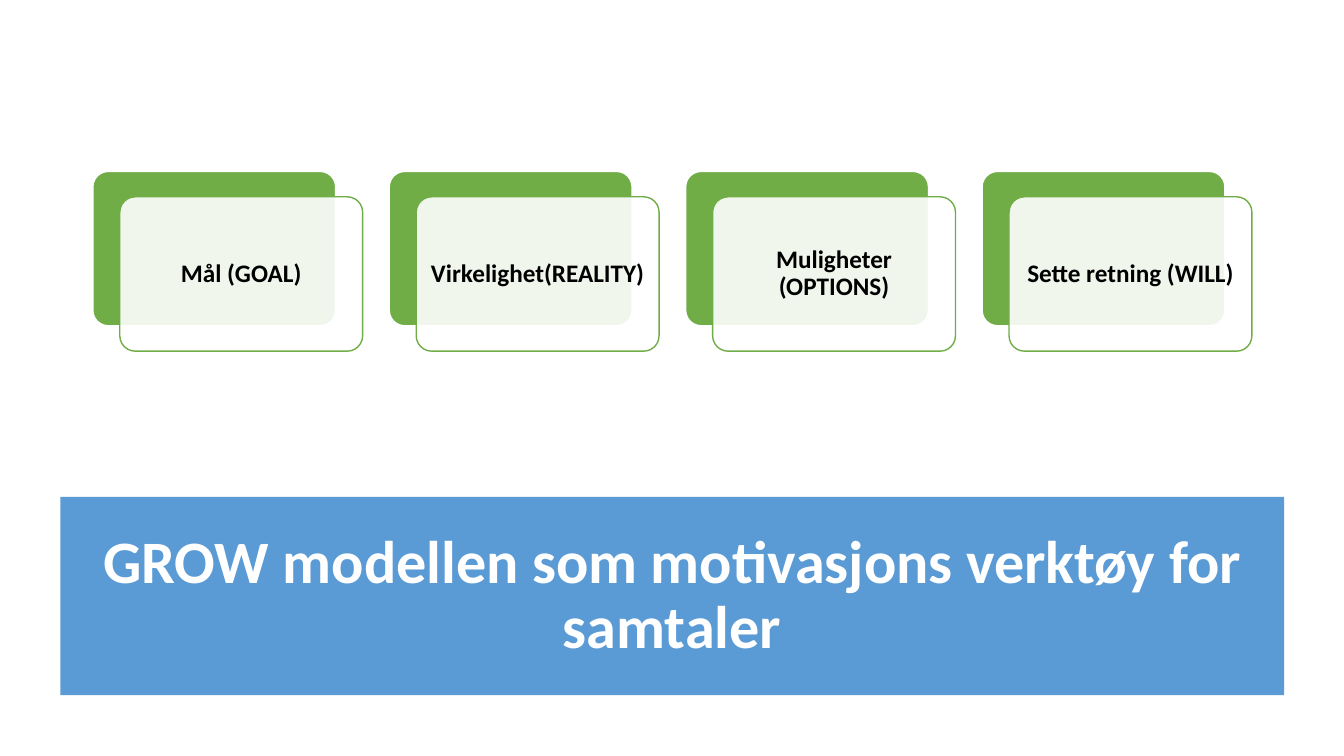
from dataclasses import dataclass

from lxml import etree
from pptx import Presentation
from pptx.dml.color import RGBColor
from pptx.enum import shapes, text
from pptx.oxml import ns
from pptx.util import Cm, Pt


@dataclass(frozen=True)
class Theme:
    font: str = "Calibri"
    banner: RGBColor = RGBColor(0x5B, 0x9B, 0xD5)
    card: RGBColor = RGBColor(0x70, 0xAD, 0x47)
    light: RGBColor = RGBColor(0xFF, 0xFF, 0xFF)
    dark: RGBColor = RGBColor(0, 0, 0)
    title_size: Pt = Pt(43)
    card_size: Pt = Pt(18)
    outline: Pt = Pt(1)


@dataclass(frozen=True)
class Box:
    left: int
    top: int
    width: int
    height: int

    def inset(self, across, down):
        return Box(self.left + across, self.top + down,
                   self.width - 2 * across, self.height - 2 * down)

    def args(self):
        return self.left, self.top, self.width, self.height


THEME = Theme()
TITLE = "GROW modellen som motivasjons verktøy for samtaler"
STEPS = ["Mål (GOAL)", "Virkelighet(REALITY)", "Muligheter (OPTIONS)", "Sette retning (WILL)"]


def add_panel(parent, kind, box, fill, line=None):
    panel = parent.add_shape(kind, *box.args())
    panel.shadow.inherit = False
    panel.fill.solid()
    panel.fill.fore_color.rgb = fill
    if line is None:
        panel.line.fill.background()
    else:
        panel.line.color.rgb = line
        panel.line.width = THEME.outline
    return panel


def set_opacity(shape, percent):
    color = shape.fill._xPr.find(ns.qn("a:solidFill"))[0]
    etree.SubElement(color, ns.qn("a:alpha")).set("val", str(percent * 1000))


def write_centred(shape, words, size, color):
    frame = shape.text_frame
    frame.word_wrap = True
    frame.vertical_anchor = text.MSO_ANCHOR.MIDDLE
    para = frame.paragraphs[0]
    para.text = words
    para.alignment = text.PP_ALIGN.CENTER
    para.line_spacing = 0.9
    para.font.name = THEME.font
    para.font.size = size
    para.font.bold = True
    para.font.color.rgb = color
    return frame


def add_step(group, box, label):
    """Place a solid card and, shifted down and right, a translucent labelled one."""
    shift_x, shift_y = Cm(0.68), Cm(0.64)
    width, height = box.width - shift_x, box.height - shift_y
    back = Box(box.left, box.top, width, height)
    front = Box(box.left + shift_x, box.top + shift_y, width, height)
    rounded = shapes.MSO_SHAPE.ROUNDED_RECTANGLE
    back_card = add_panel(group, rounded, back, THEME.card, THEME.light)
    front_card = add_panel(group, rounded, front, THEME.light, THEME.card)
    for card in (back_card, front_card):
        card.adjustments[0] = 0.1
    set_opacity(front_card, 90)
    frame = write_centred(front_card, label, THEME.card_size, THEME.dark)
    frame.margin_left = frame.margin_right = Cm(0.18)
    frame.margin_top = frame.margin_bottom = Cm(0.18)


def add_steps(slide, box):
    group = slide.shapes.add_group_shape().shapes
    gap = Cm(0.67)
    width = (box.width - gap * (len(STEPS) - 1)) // len(STEPS)
    for index, label in enumerate(STEPS):
        left = box.left + index * (width + gap)
        add_step(group, Box(left, box.top, width, box.height), label)


def add_banner(slide, box):
    add_panel(slide.shapes, shapes.MSO_SHAPE.RECTANGLE, box, THEME.banner)
    title = slide.shapes.add_textbox(*box.inset(Cm(0.82), Cm(0.66)).args())
    write_centred(title, TITLE, THEME.title_size, THEME.light)


def main():
    deck = Presentation()
    deck.slide_width, deck.slide_height = Cm(33.87), Cm(19.05)
    slide = deck.slides.add_slide(deck.slide_layouts[6])
    add_banner(slide, Box(Cm(1.52), Cm(12.52), Cm(30.84), Cm(5)))
    add_steps(slide, Box(Cm(2.34), Cm(4.32), Cm(29.21), Cm(4.53)))
    deck.save("out.pptx")


if __name__ == "__main__":
    main()
